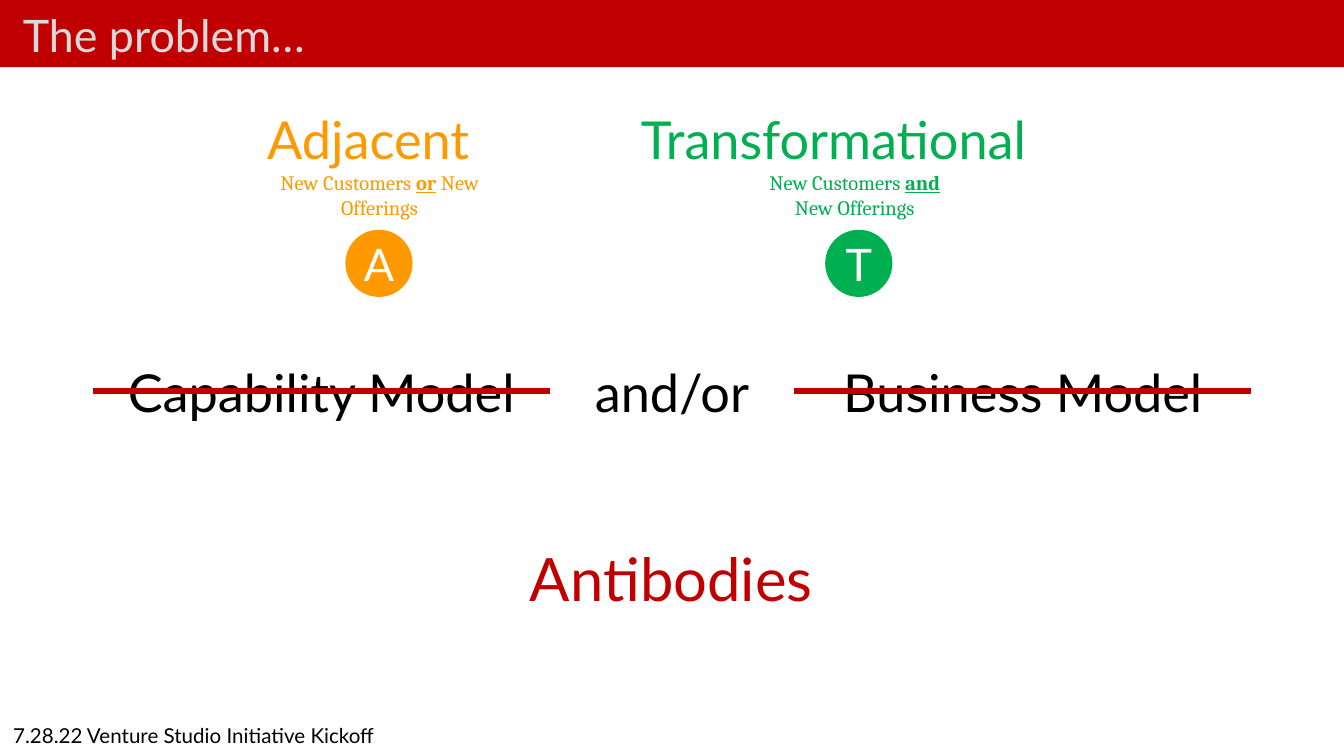
from dataclasses import dataclass

from lxml.etree import SubElement
from pptx import Presentation
from pptx.dml.color import RGBColor
from pptx.enum.shapes import MSO_CONNECTOR, MSO_SHAPE
from pptx.enum.text import MSO_ANCHOR, MSO_AUTO_SIZE, PP_ALIGN
from pptx.oxml.ns import qn
from pptx.util import Inches, Pt

RED, ORANGE, GREEN = "C00000", "FF9900", "00B050"
BLACK, WHITE, GREY = "000000", "FFFFFF", "D9D9D9"
SLIDE_WIDTH = 10
SLIDE_HEIGHT = SLIDE_WIDTH * 9 / 16


@dataclass
class Growth:
    name: str
    letter: str
    color: str
    left: float
    width: float
    circle_left: float
    lines: list[list[str]]  # the second run of a line is emphasised


@dataclass
class Model:
    name: str
    left: float
    width: float
    strike_left: float


GROWTHS = [
    Growth("Adjacent", "A", ORANGE, 1.89, 1.87, 2.57,
           [["New Customers ", "or", " New Offerings"]]),
    Growth("Transformational", "T", GREEN, 4.67, 3.45, 6.14,
           [["New Customers ", "and"], ["New Offerings"]]),
]
MODELS = [
    Model("Capability Model", 0.69, 3.4, 0.69),
    Model("Business Model", 6.06, 3.1, 5.91),
]
STRIKE_Y, STRIKE_WIDTH = 2.91, 3.4


def rgb(color: str) -> RGBColor:
    return RGBColor.from_string(color)


def style(p, size: float, color: str, align=PP_ALIGN.CENTER, font: str = "Lato") -> None:
    p.alignment = align
    p.font.name = font
    p.font.size = Pt(size)
    p.font.color.rgb = rgb(color)


def add_text(shapes, text: str, left: float, top: float, width: float, height: float,
             size: float, color: str, align=PP_ALIGN.CENTER):
    box = shapes.add_textbox(Inches(left), Inches(top), Inches(width), Inches(height))
    tf = box.text_frame
    tf.word_wrap = True
    tf.text = text
    style(tf.paragraphs[0], size, color, align)
    return tf


def add_filled(shapes, kind, left: float, top: float, width: float, height: float, color: str):
    sp = shapes.add_shape(kind, Inches(left), Inches(top), Inches(width), Inches(height))
    sp.shadow.inherit = False
    sp.fill.solid()
    sp.fill.fore_color.rgb = rgb(color)
    sp.line.fill.background()
    return sp


def add_growth(s, growth: Growth) -> None:
    shapes = s.shapes.add_group_shape().shapes
    circle = add_filled(shapes, MSO_SHAPE.OVAL, growth.circle_left, 1.71, 0.5, 0.5, growth.color)
    tf = circle.text_frame
    tf.margin_left = tf.margin_right = 0
    tf.vertical_anchor = MSO_ANCHOR.MIDDLE
    tf.text = growth.letter
    style(tf.paragraphs[0], 24, WHITE)

    tf = add_text(shapes, growth.name, growth.left, 0.75, growth.width, 0.94,
                  28, growth.color, PP_ALIGN.LEFT)
    for line in growth.lines:
        p = tf.add_paragraph()
        style(p, 11, growth.color, font="Cambria")
        if len(line) == 2:  # keep the emphasised end slightly left of centre
            p._p.get_or_add_pPr().set("marR", str(Inches(0.07)))
        for i, text in enumerate(line):
            r = p.add_run()
            r.text = text
            if i == 1:
                r.font.bold = r.font.underline = True


def add_struck_model(s, model: Model) -> None:
    add_text(s.shapes, model.name, model.left, 2.63, model.width, 0.57, 28, BLACK)
    line = s.shapes.add_connector(
        MSO_CONNECTOR.STRAIGHT, Inches(model.strike_left), Inches(STRIKE_Y),
        Inches(model.strike_left + STRIKE_WIDTH), Inches(STRIKE_Y))
    line.line.color.rgb = rgb(RED)
    line.line.width = Pt(3)
    SubElement(line._element.spPr, qn("a:effectLst"))


def main() -> None:
    prs = Presentation()
    prs.slide_width, prs.slide_height = Inches(SLIDE_WIDTH), Inches(SLIDE_HEIGHT)
    s = prs.slides.add_slide(prs.slide_layouts[5])

    # Title over a red band
    band = add_filled(s.shapes, MSO_SHAPE.RECTANGLE, 0, 0, SLIDE_WIDTH, 0.5, RED)
    title = s.shapes.title
    title._element.addprevious(band._element)
    title.left, title.top = Inches(0.07), Inches(0.01)
    title.width, title.height = Inches(9.13), Inches(0.5)
    tf = title.text_frame
    tf.auto_size = MSO_AUTO_SIZE.NONE
    tf.vertical_anchor = MSO_ANCHOR.TOP
    tf.text = "The problem…"
    style(tf.paragraphs[0], 24, GREY, PP_ALIGN.LEFT)

    # Kinds of growth
    for growth in GROWTHS:
        add_growth(s, growth)

    # Struck-out models and the outcome
    for model in MODELS:
        add_struck_model(s, model)
    add_text(s.shapes, "and/or", 4.25, 2.63, 1.5, 0.57, 28, BLACK)
    add_text(s.shapes, "Antibodies", 3.75, 3.98, 2.49, 0.64, 32, RED)

    # Footer
    add_text(s.shapes, "7.28.22 Venture Studio Initiative Kickoff",
             0, 5.33, 9.13, 0.29, 11, BLACK, PP_ALIGN.LEFT)

    prs.save("out.pptx")


if __name__ == "__main__":
    main()
